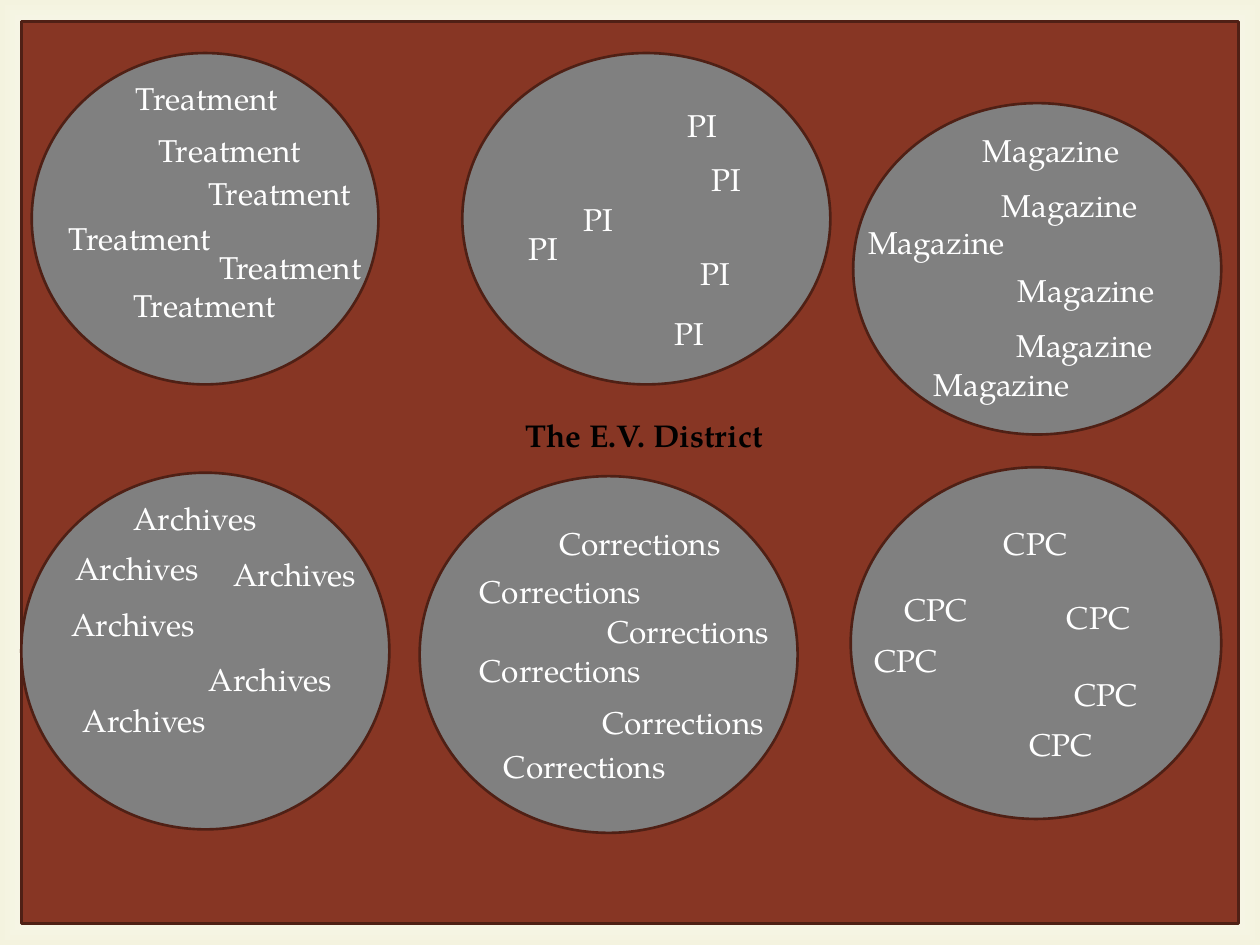
"""Build a slide of six service committees within a district."""
from lxml import etree
from pptx import Presentation
from pptx.dml.color import RGBColor
from pptx.enum.shapes import MSO_SHAPE
from pptx.enum.text import MSO_AUTO_SIZE
from pptx.oxml.ns import qn
from pptx.util import Cm, Pt

RECT, OVAL = MSO_SHAPE.RECTANGLE, MSO_SHAPE.OVAL
GROW = MSO_AUTO_SIZE.SHAPE_TO_FIT_TEXT
WHITE = RGBColor(0xFF, 0xFF, 0xFF)
BLACK = RGBColor(0, 0, 0)
CREAM = RGBColor(0xF4, 0xF3, 0xDF)
RUST = RGBColor(0x87, 0x36, 0x24)
BROWN = RGBColor(0x4F, 0x20, 0x15)
GRAY = RGBColor(0x80, 0x80, 0x80)
FONT = "TeX Gyre Pagella"
WIDE, HIGH, EDGE = 25.4, 19.05, 0.43
ROW = 1.02

TITLE = ("The E.V. District", 10.34, 8.26, 5.51)
GROUPS = [
    ("Treatment", 3.61, (0.64, 1.07, 6.99, 6.68),
     [(2.95, 2.51), (3.96, 3.38), (1.14, 4.29),
      (2.49, 1.47), (4.17, 4.88), (2.44, 5.64)]),
    ("PI", 1.27, (9.32, 1.07, 7.42, 6.68),
     [(13.61, 2.01), (13.87, 5), (14.1, 3.1),
      (10.41, 4.5), (11.51, 3.91), (13.34, 6.2)]),
    ("Magazine", 3.66, (17.2, 2.08, 7.42, 6.68),
     [(17.25, 4.37), (19.56, 2.51), (19.94, 3.63),
      (18.57, 7.24), (20.27, 5.33), (20.24, 6.45)]),
    ("Archives", 3.05, (0.43, 9.53, 7.42, 7.19),
     [(2.44, 9.93), (1.27, 10.95), (4.45, 11.07),
      (1.19, 12.07), (1.42, 14), (3.96, 13.18)]),
    ("Corrections", 3.96, (8.46, 9.6, 7.62, 7.19),
     [(11.89, 14.05), (9.42, 13), (11.02, 10.44),
      (9.91, 14.94), (9.42, 11.4), (11.99, 12.22)]),
    ("CPC", 1.98, (17.15, 9.42, 7.47, 7.09),
     [(21.41, 13.49), (19.99, 10.44), (20.5, 14.5),
      (17.98, 11.76), (21.26, 11.94), (17.37, 12.8)]),
]


def add_form(slide, kind, box, fill=None):
    form = slide.shapes.add_shape(kind, *map(Cm, box))
    form.shadow.inherit = False
    if fill is None:
        form.line.fill.background()
    else:
        form.fill.solid()
        form.fill.fore_color.rgb = fill
        form.line.color.rgb = BROWN
        form.line.width = Pt(1.5)
    return form


def add_glow(slide):
    form = add_form(slide, RECT, (0, 0, WIDE, HIGH))
    form.fill.gradient()
    stops = form.fill.gradient_stops
    for stop, place, color in zip(stops, (0.83, 1), (WHITE, CREAM)):
        stop.position = place
        stop.color.rgb = color
    grad = form._element.spPr.find(qn("a:gradFill"))
    route = etree.Element(qn("a:path"), {"path": "rect"})
    etree.SubElement(route, qn("a:fillToRect"),
                     {side: "50000" for side in "ltrb"})
    grad.replace(grad.find(qn("a:lin")), route)


def add_text(slide, text, left, top, width, color=WHITE, bold=False):
    box = slide.shapes.add_textbox(Cm(left), Cm(top), Cm(width), Cm(ROW))
    frame = box.text_frame
    frame.word_wrap = False
    frame.auto_size = GROW
    run = frame.paragraphs[0].add_run()
    run.text = text
    font = run.font
    font.name, font.size, font.bold = FONT, Pt(18), bold
    font.color.rgb = color


def main():
    deck = Presentation()
    deck.slide_width, deck.slide_height = Cm(WIDE), Cm(HIGH)
    slide = deck.slides.add_slide(deck.slide_layouts[6])
    add_glow(slide)
    panel = (EDGE, EDGE, WIDE - 2 * EDGE, HIGH - 2 * EDGE)
    add_form(slide, RECT, panel, RUST)
    for _, _, ring, _ in GROUPS:
        add_form(slide, OVAL, ring, GRAY)
    for name, width, _, spots in GROUPS:
        for left, top in spots:
            add_text(slide, name, left, top, width)
    add_text(slide, *TITLE, color=BLACK, bold=True)
    deck.save("out.pptx")


if __name__ == "__main__":
    main()
